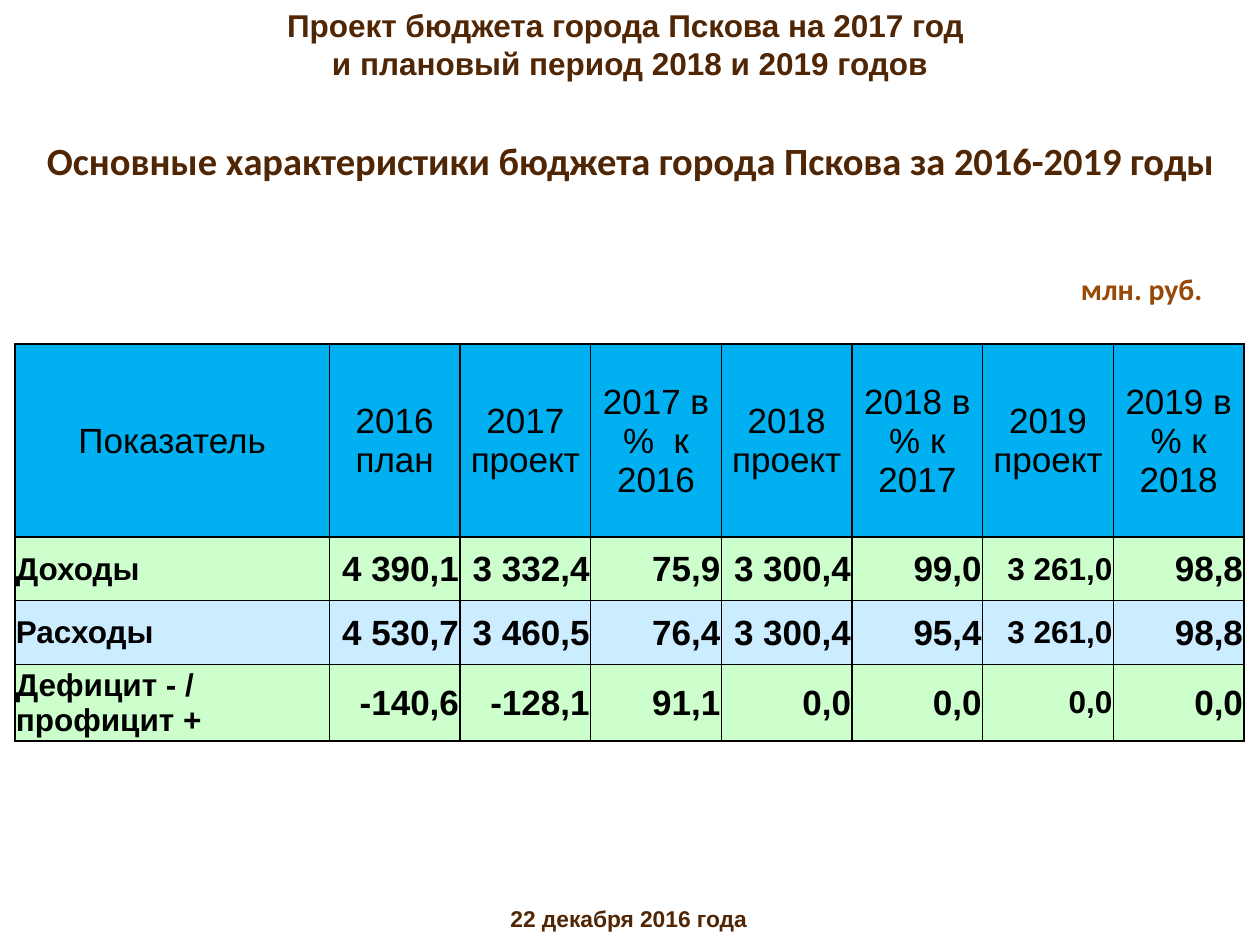
import pptx
import pptx.dml.color
import pptx.enum.text
import pptx.oxml
import pptx.oxml.ns
import pptx.util

Cm = pptx.util.Cm
Pt = pptx.util.Pt
RGBColor = pptx.dml.color.RGBColor
ALIGN = pptx.enum.text.PP_ALIGN

BROWN = RGBColor(0x50, 0x26, 0x04)
ORANGE = RGBColor(0x98, 0x48, 0x07)
BLACK = RGBColor(0x00, 0x00, 0x00)
HEADER_BLUE = RGBColor(0x00, 0xB0, 0xF0)
PALE_GREEN = RGBColor(0xCC, 0xFF, 0xCC)
PALE_BLUE = RGBColor(0xCC, 0xEC, 0xFF)

HEADERS = ["Показатель", "2016 план", "2017 проект", "2017 в %  к 2016",
           "2018 проект", "2018 в % к 2017", "2019 проект", "2019 в % к 2018"]
BUDGET = [
    ["Доходы", "4 390,1", "3 332,4", "75,9", "3 300,4", "99,0", "3 261,0", "98,8"],
    ["Расходы", "4 530,7", "3 460,5", "76,4", "3 300,4", "95,4", "3 261,0", "98,8"],
    ["Дефицит - / профицит +", "-140,6", "-128,1", "91,1", "0,0", "0,0", "0,0", "0,0"],
]
COLUMN_WIDTHS = [6.34] + [2.635] * 7
ROW_HEIGHTS = [3.9, 1.28, 1.28, 1.35]
SMALL_COLUMNS = (0, 6)


def add_run(paragraph, text, size, color, font_name="Arial", bold=True):
    """Append one formatted run to the paragraph."""
    run = paragraph.add_run()
    run.text = text
    run.font.name = font_name
    run.font.size = Pt(size)
    run.font.bold = bold
    run.font.color.rgb = color


def add_text(slide, box, lines, size, color, font_name="Arial",
             alignment=ALIGN.CENTER, wrap=True):
    """Add a text box holding one paragraph with line breaks."""
    shape = slide.shapes.add_textbox(*(Cm(length) for length in box))
    shape.text_frame.word_wrap = wrap
    paragraph = shape.text_frame.paragraphs[0]
    paragraph.alignment = alignment
    for index, line in enumerate(lines):
        if index:
            paragraph.add_line_break()
        add_run(paragraph, line, size, color, font_name)


def set_borders(cell, top, bottom):
    """Draw black cell borders with the given top and bottom widths."""
    properties = cell._tc.get_or_add_tcPr()
    widths = {"lnL": 1, "lnR": 1, "lnT": top, "lnB": bottom}
    for position, (side, width) in enumerate(widths.items()):
        line = pptx.oxml.parse_xml(
            f'<a:{side} {pptx.oxml.ns.nsdecls("a")} w="{Pt(width)}">'
            f'<a:solidFill><a:srgbClr val="{BLACK}"/></a:solidFill></a:{side}>')
        properties.insert(position, line)


def fill_cell(cell, text, size, fill, alignment, bold):
    """Fill a table cell with color and text."""
    cell.fill.solid()
    cell.fill.fore_color.rgb = fill
    cell.vertical_anchor = pptx.enum.text.MSO_ANCHOR.MIDDLE
    cell.margin_left = cell.margin_right = cell.margin_top = Cm(0.02)
    cell.margin_bottom = 0
    paragraph = cell.text_frame.paragraphs[0]
    paragraph.alignment = alignment
    add_run(paragraph, text, size, BLACK, bold=bold)


def add_budget_table(slide):
    """Add the table of budget indicators."""
    rows = [HEADERS] + BUDGET
    table = slide.shapes.add_table(
        len(rows), len(HEADERS), Cm(0.3), Cm(6.93),
        Cm(sum(COLUMN_WIDTHS)), Cm(sum(ROW_HEIGHTS))).table
    for column, width in zip(table.columns, COLUMN_WIDTHS):
        column.width = Cm(width)
    for row, height in zip(table.rows, ROW_HEIGHTS):
        row.height = Cm(height)
    for row_index, values in enumerate(rows):
        header = row_index == 0
        fill = HEADER_BLUE if header else PALE_GREEN if row_index % 2 else PALE_BLUE
        top = 0.5 if row_index > 1 else 1
        bottom = 0.5 if row_index in (1, 2) else 1
        for column_index, text in enumerate(values):
            cell = table.cell(row_index, column_index)
            small = not header and column_index in SMALL_COLUMNS
            alignment = (ALIGN.CENTER if header
                         else ALIGN.RIGHT if column_index else ALIGN.LEFT)
            fill_cell(cell, text, 18 if small else 20, fill, alignment, not header)
            set_borders(cell, top, bottom)


def main():
    """Build and save the budget slide."""
    presentation = pptx.Presentation()
    presentation.slide_width = Cm(25.4)
    presentation.slide_height = Cm(19.05)
    slide = presentation.slides.add_slide(presentation.slide_layouts[6])
    add_text(slide, (0, 0, 25.4, 1.8),
             ["Проект бюджета города Пскова на 2017 год ",
              "и плановый период 2018 и 2019 годов"], 18, BROWN)
    add_text(slide, (-0.03, 18.11, 25.4, 0.81), ["22 декабря 2016 года"], 13, BROWN)
    add_text(slide, (0.03, 2.64, 25.37, 1.19),
             ["Основные характеристики бюджета города Пскова за 2016-2019 годы"],
             22, BROWN, "Calibri")
    add_text(slide, (21.54, 5.33, 2.97, 0.99), ["млн. руб."], 17, ORANGE,
             "Calibri", ALIGN.LEFT, wrap=False)
    add_budget_table(slide)
    presentation.save("out.pptx")


if __name__ == "__main__":
    main()
